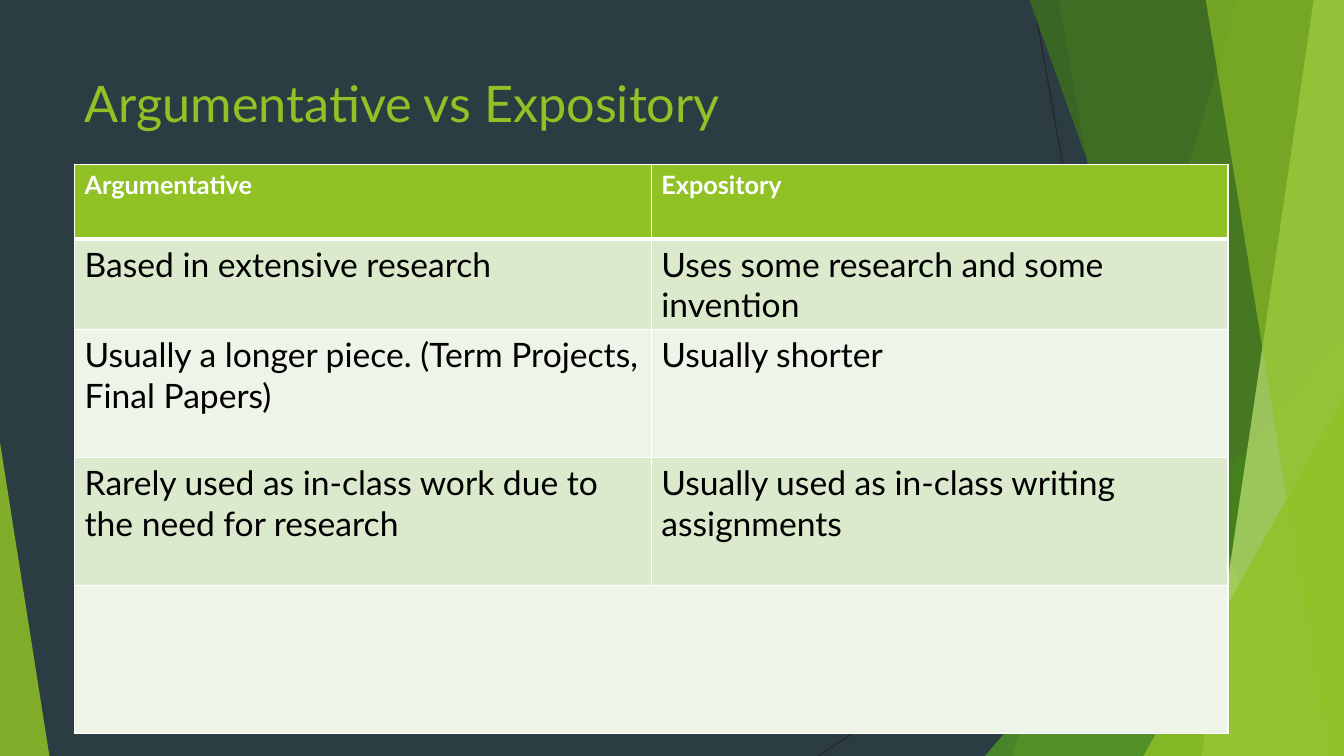
import pptx
import pptx.dml.color
import pptx.enum.shapes
import pptx.enum.text
import pptx.oxml.ns
import pptx.util
from dataclasses import dataclass
from lxml import etree

WIDTH, HEIGHT = 13.33, 7.5

TITLE = "Argumentative vs Expository"
ROWS = [
    ("Argumentative", "Expository"),
    ("Based in extensive research", "Uses some research and some invention"),
    ("Usually a longer piece. (Term Projects, Final Papers)", "Usually shorter"),
    ("Rarely used as in-class work due to the need for research",
     "Usually used as in-class writing assignments"),
    ("", ""),
]
ROW_HEIGHTS = [0.74, 0.74, 1.27, 1.27, 1.47]
LEFT, TABLE_TOP, COLUMN_WIDTH = 0.74, 1.63, 5.72


@dataclass(frozen=True)
class Theme:
    font: str = "Lato"
    background: str = "2C3C43"
    accent: str = "90C226"
    green: str = "54A021"
    dark_green: str = "3F7819"
    light_green: str = "C0E474"
    hairline: str = "262626"
    band_dark: str = "DBE9CD"
    band_light: str = "EEF4E8"
    white: str = "FFFFFF"
    black: str = "000000"
    title_size: int = 36
    header_size: int = 18
    body_size: int = 24


THEME = Theme()

HAIRLINES = [((10.25, 0), (11.58, HEIGHT)), ((WIDTH, 4.03), (8.12, HEIGHT))]
# Back to front. Shard: left edge at top and bottom, reaching the right side.
# Wedge: left, top, width and apex position, standing on the bottom side.
DECORATION = [
    ("shard", (12.28, 10.04), THEME.accent, 30),
    ("shard", (10.5, 11.83), THEME.accent, 20),
    ("wedge", (9.77, 3.33, 3.56, 1), THEME.green, 72),
    ("shard", (10.21, 12.91), THEME.dark_green, 70),
    ("shard", (13.03, 11.92), THEME.light_green, 70),
    ("shard", (11.96, 13.18), THEME.accent, 65),
    ("wedge", (11.34, 3.93, 1.99, 1), THEME.accent, 80),
    ("wedge", (0, 4.39, 0.49, 0), THEME.accent, 85),
]


def inches(*lengths):
    return [pptx.util.Inches(length) for length in lengths]


def rgb(color):
    return pptx.dml.color.RGBColor.from_string(color)


def add_child(parent, tag, **attributes):
    return etree.SubElement(parent, pptx.oxml.ns.qn(tag), attributes)


def write_text(frame, text, *, size, color, bold=False):
    frame.word_wrap = True
    run = frame.paragraphs[0].add_run()
    run.text = text
    run.font.name = THEME.font
    run.font.size = pptx.util.Pt(size)
    run.font.bold = bold
    run.font.color.rgb = rgb(color)


def add_hairline(slide, start, end):
    line = slide.shapes.add_connector(
        pptx.enum.shapes.MSO_CONNECTOR.STRAIGHT, *inches(*start, *end))
    line.line.color.rgb = rgb(THEME.hairline)
    line.line.width = pptx.util.Pt(0.75)
    add_child(line._element.spPr, "a:effectLst")


def add_shard(slide, top_x, bottom_x):
    corners = [(top_x, 0), (WIDTH, 0), (WIDTH, HEIGHT), (bottom_x, HEIGHT)]
    points = [inches(*corner) for corner in corners]
    builder = slide.shapes.build_freeform(*points[0])
    builder.add_line_segments(points[1:], close=True)
    return builder.convert_to_shape()


def add_wedge(slide, left, top, width, apex):
    wedge = slide.shapes.add_shape(
        pptx.enum.shapes.MSO_SHAPE.ISOSCELES_TRIANGLE,
        *inches(left, top, width, HEIGHT - top))
    wedge.adjustments[0] = apex
    return wedge


def add_decoration(slide):
    for start, end in HAIRLINES:
        add_hairline(slide, start, end)
    builders = {"shard": add_shard, "wedge": add_wedge}
    for kind, geometry, color, opacity in DECORATION:
        shape = builders[kind](slide, *geometry)
        shape.shadow.inherit = False
        shape.line.fill.background()
        shape.fill.solid()
        shape.fill.fore_color.rgb = rgb(color)
        color_element = shape._element.spPr.find(".//" + pptx.oxml.ns.qn("a:srgbClr"))
        add_child(color_element, "a:alpha", val=str(opacity * 1000))


def set_borders(cell, **widths):
    """Draw white borders; widths in points are keyed by side: L, R, T, B."""
    properties = cell._tc.get_or_add_tcPr()
    for side, width in widths.items():
        line = add_child(properties, f"a:ln{side}", w=str(pptx.util.Pt(width)))
        add_child(add_child(line, "a:solidFill"), "a:srgbClr", val=THEME.white)


def add_comparison(slide):
    columns = len(ROWS[0])
    table = slide.shapes.add_table(
        len(ROWS), columns,
        *inches(LEFT, TABLE_TOP, columns * COLUMN_WIDTH, sum(ROW_HEIGHTS))).table
    for row, height in zip(table.rows, ROW_HEIGHTS):
        row.height = pptx.util.Inches(height)
    for r, texts in enumerate(ROWS):
        header = r == 0
        fill = THEME.accent if header else (THEME.band_light, THEME.band_dark)[r % 2]
        for c, text in enumerate(texts):
            cell = table.cell(r, c)
            set_borders(cell, L=1, R=1, T=3 if r == 1 else 1, B=3 if header else 1)
            cell.fill.solid()
            cell.fill.fore_color.rgb = rgb(fill)
            if text:
                write_text(cell.text_frame, text, bold=header,
                           size=THEME.header_size if header else THEME.body_size,
                           color=THEME.white if header else THEME.black)
    last = len(ROWS) - 1
    table.cell(last, 0).merge(table.cell(last, columns - 1))


def main():
    presentation = pptx.Presentation()
    presentation.slide_width, presentation.slide_height = inches(WIDTH, HEIGHT)
    slide = presentation.slides.add_slide(presentation.slide_layouts[6])
    slide.background.fill.solid()
    slide.background.fill.fore_color.rgb = rgb(THEME.background)
    add_decoration(slide)
    title = slide.shapes.add_textbox(*inches(LEFT, 0.67, 9.4, 1.44))
    title.text_frame.vertical_anchor = pptx.enum.text.MSO_ANCHOR.TOP
    write_text(title.text_frame, TITLE, size=THEME.title_size, color=THEME.accent)
    add_comparison(slide)
    presentation.save("out.pptx")


if __name__ == "__main__":
    main()
